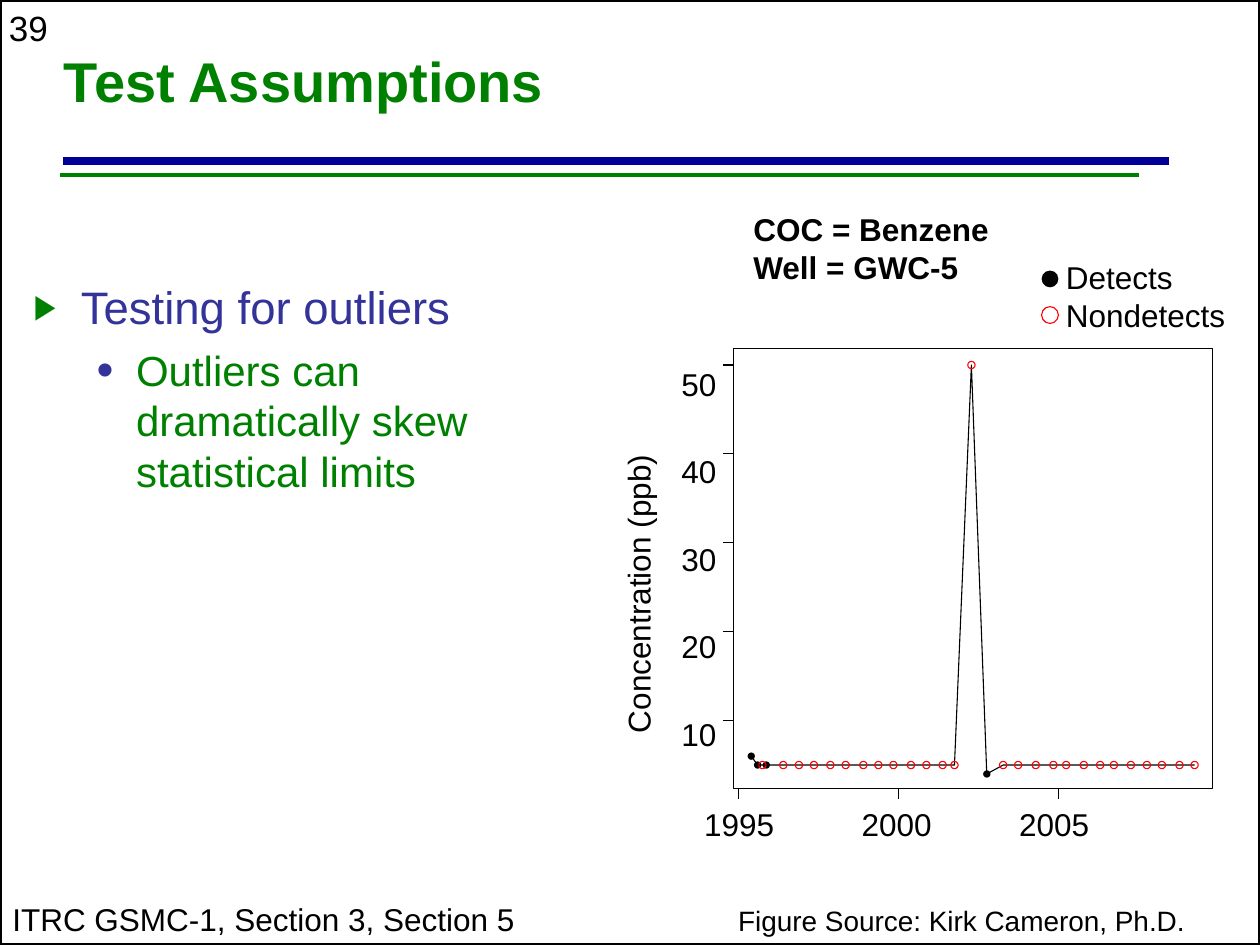
from dataclasses import dataclass

from lxml import etree
from pptx import Presentation
from pptx.dml.color import RGBColor
from pptx.enum.shapes import MSO_CONNECTOR, MSO_SHAPE
from pptx.enum.text import MSO_ANCHOR, MSO_AUTO_SIZE
from pptx.oxml.ns import qn
from pptx.util import Pt

STRAIGHT = MSO_CONNECTOR.STRAIGHT
OVAL, RECT = MSO_SHAPE.OVAL, MSO_SHAPE.RECTANGLE
MIDDLE = MSO_ANCHOR.MIDDLE
FIT_SHAPE = MSO_AUTO_SIZE.SHAPE_TO_FIT_TEXT

FONT = "Arial"
COLORS = {"black": "000000", "green": "008000", "navy": "000099",
          "indigo": "333399", "red": "FF0000"}
THIN = 0.63

# Plot frame and scales, in points
LEFT, TOP, RIGHT, BOTTOM = 419, 199.4, 692.7, 450.7
TICK = 6
X_1995, PT_PER_YEAR = 422, 18.29
Y_10, PT_PER_PPB = 411.8, 5.08


@dataclass
class Label:
    lines: list[str]
    x: float
    y: float
    w: float
    h: float
    size: float = 18
    bold: bool = False
    rotation: float = 0
    spacing: float | None = None
    tabs: tuple[float, ...] = ()


@dataclass
class Bullet:
    text: str
    size: float
    color: str
    mark: str
    mark_color: str
    mark_pct: int
    margin: float
    hang: float
    before: float = 0


@dataclass
class Sample:
    year: float
    ppb: float
    detect: bool = False


LABELS = [
    Label(["39"], -2, 0, 39, 31, size=20),
    Label(["ITRC GSMC-1, Section 3, Section 5"], 0, 510.5, 304.6, 29),
    Label(["COC = Benzene", "Well = GWC-5"], 423.4, 116.6, 150.5, 51, bold=True),
    Label(["Concentration (ppb)"], 277.2, 324, 175, 29, rotation=270),
    Label(["50", "40", "30", "20", "10"], 382.3, 176.4, 34.6, 260, spacing=50),
    Label(["1995\t2000\t2005"], 395.3, 456.5, 236.2, 29, tabs=(90, 180)),
    Label(["Detects", "Nondetects"], 602, 144, 106.6, 51),
    Label(["Figure Source: Kirk Cameron, Ph.D."], 414.7, 512.6, 278, 26.6, size=16),
]
BULLETS = [
    Bullet("Testing for outliers", 26, "indigo", "▶", "green", 75, 27, 27),
    Bullet("Outliers can dramatically skew statistical limits", 24, "green",
           "•", "indigo", 115, 58.5, 22.5, before=6),
]

NONDETECT_PPB = 5
SPIKE_YEAR = 2002.28
NONDETECT_YEARS = [
    1995.75, 1996.4, 1996.89, 1997.36, 1997.87, 1998.35, 1998.9, 1999.37,
    1999.84, 2000.39, 2000.87, 2001.38, 2001.75, 2003.27, 2003.74, 2004.29,
    2004.84, 2005.24, 2005.79, 2006.3, 2006.73, 2007.26, 2007.76, 2008.23,
    2008.78, 2009.25]
SAMPLES = sorted(
    [Sample(1995.4, 6, True), Sample(1995.6, 5, True), Sample(1995.87, 5, True),
     Sample(2002.76, 4, True), Sample(SPIKE_YEAR, 50)]
    + [Sample(year, NONDETECT_PPB) for year in NONDETECT_YEARS],
    key=lambda sample: sample.year)


def rgb(name: str) -> RGBColor:
    return RGBColor.from_string(COLORS[name])


def x_at(year: float) -> float:
    return X_1995 + (year - 1995) * PT_PER_YEAR


def y_at(ppb: float) -> float:
    return Y_10 - (ppb - 10) * PT_PER_PPB


def add_run(p, text: str, size: float, color: str, bold: bool = False) -> None:
    r = p.add_run()
    r.text = text
    r.font.name, r.font.size, r.font.bold = FONT, Pt(size), bold
    r.font.color.rgb = rgb(color)


def add_box(s, x: float, y: float, w: float, h: float, wrap: bool = True):
    sp = s.shapes.add_textbox(Pt(x), Pt(y), Pt(w), Pt(h))
    sp.text_frame.word_wrap = wrap
    return sp


def add_label(s, label: Label) -> None:
    sp = add_box(s, label.x, label.y, label.w, label.h, wrap=False)
    sp.rotation = label.rotation
    tf = sp.text_frame
    tf.auto_size = FIT_SHAPE
    for i, line in enumerate(label.lines):
        p = tf.add_paragraph() if i else tf.paragraphs[0]
        if label.spacing:
            p.line_spacing = Pt(label.spacing)
        if label.tabs:
            tab_list = etree.SubElement(p._p.get_or_add_pPr(), qn("a:tabLst"))
            for pos in label.tabs:
                etree.SubElement(tab_list, qn("a:tab"), pos=str(Pt(pos)), algn="l")
        add_run(p, line, label.size, "black", label.bold)


def add_bullet(p, level: int, bullet: Bullet) -> None:
    p.level = level
    pPr = p._p.get_or_add_pPr()
    pPr.set("marL", str(Pt(bullet.margin)))
    pPr.set("indent", str(-Pt(bullet.hang)))
    color = etree.SubElement(pPr, qn("a:buClr"))
    etree.SubElement(color, qn("a:srgbClr"), val=COLORS[bullet.mark_color])
    etree.SubElement(pPr, qn("a:buSzPct"), val=str(bullet.mark_pct * 1000))
    etree.SubElement(pPr, qn("a:buFont"), typeface=FONT)
    etree.SubElement(pPr, qn("a:buChar"), char=bullet.mark)
    if bullet.before:
        p.space_before = Pt(bullet.before)
    add_run(p, bullet.text, bullet.size, bullet.color)


def add_line(s, x1: float, y1: float, x2: float, y2: float,
             color: str = "black", width: float = THIN) -> None:
    sp = s.shapes.add_connector(STRAIGHT, Pt(x1), Pt(y1), Pt(x2), Pt(y2))
    sp.line.color.rgb, sp.line.width = rgb(color), Pt(width)
    etree.SubElement(sp._element.spPr, qn("a:effectLst"))


def outline(sp, color: str, width: float = THIN) -> None:
    sp.shadow.inherit = False
    sp.fill.background()
    sp.line.color.rgb, sp.line.width = rgb(color), Pt(width)


def add_frame(s, x: float, y: float, w: float, h: float, width: float) -> None:
    outline(s.shapes.add_shape(RECT, Pt(x), Pt(y), Pt(w), Pt(h)), "black", width)


def add_marker(s, x: float, y: float, size: float, detect: bool) -> None:
    sp = s.shapes.add_shape(OVAL, Pt(x - size / 2), Pt(y - size / 2), Pt(size), Pt(size))
    outline(sp, "black" if detect else "red")
    if detect:
        sp.fill.solid()
        sp.fill.fore_color.rgb = rgb("black")
        sp.line.fill.background()


def add_plot(s) -> None:
    # Sample line
    points = [(Pt(x_at(d.year)), Pt(y_at(d.ppb))) for d in SAMPLES]
    builder = s.shapes.build_freeform(*points[0])
    builder.add_line_segments(points[1:], close=False)
    outline(builder.convert_to_shape(), "black")
    # Axes and ticks
    add_line(s, LEFT, y_at(10), LEFT, y_at(50))
    for ppb in range(10, 51, 10):
        add_line(s, LEFT, y_at(ppb), LEFT - TICK, y_at(ppb))
    add_frame(s, LEFT, TOP, RIGHT - LEFT, BOTTOM - TOP, THIN)
    add_line(s, x_at(1995), BOTTOM, x_at(2005), BOTTOM)
    for year in (1995, 2000, 2005):
        add_line(s, x_at(year), BOTTOM, x_at(year), BOTTOM + TICK)
    # Markers, detects below nondetects
    for d in sorted(SAMPLES, key=lambda sample: not sample.detect):
        add_marker(s, x_at(d.year), y_at(d.ppb), 4.2, d.detect)
    # Legend markers
    for y, detect in ((159.4, True), (180, False)):
        add_marker(s, 600, y, 9.6, detect)


def main() -> None:
    prs = Presentation()
    prs.slide_width, prs.slide_height = Pt(720), Pt(540)
    s = prs.slides.add_slide(prs.slide_layouts[6])

    # Header rules and slide border
    add_line(s, 36, 92, 668, 92, "navy", 4.5)
    add_line(s, 34.5, 100, 651, 100, "green", 2)
    add_frame(s, 0, 0, 720, 540, 2)

    # Title
    tf = add_box(s, 29.5, 7.2, 597.6, 82.8).text_frame
    tf.vertical_anchor = MIDDLE
    p = tf.paragraphs[0]
    p.line_spacing = 0.85
    add_run(p, "Test Assumptions", 32, "green", bold=True)

    # Bullets
    tf = add_box(s, 12.2, 156.2, 311.8, 149).text_frame
    for level, bullet in enumerate(BULLETS):
        add_bullet(tf.add_paragraph() if level else tf.paragraphs[0], level, bullet)

    add_plot(s)
    for label in LABELS:
        add_label(s, label)
    prs.save("out.pptx")


if __name__ == "__main__":
    main()
